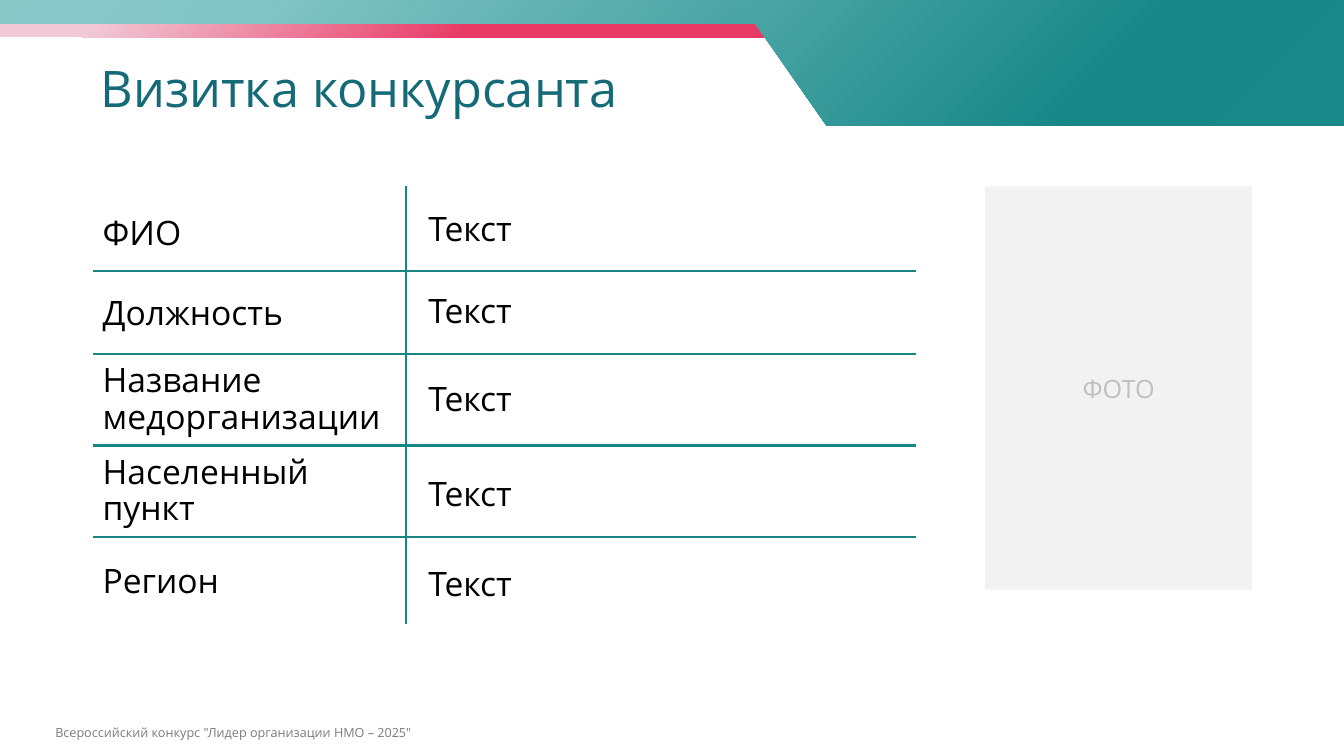
from pptx import Presentation
from pptx.dml.color import RGBColor
from pptx.enum.shapes import MSO_CONNECTOR, MSO_SHAPE
from pptx.enum.text import MSO_ANCHOR, PP_ALIGN
from pptx.oxml import parse_xml
from pptx.oxml.ns import nsdecls, qn
from pptx.util import Inches, Pt
from lxml.etree import SubElement

TEAL = RGBColor(0x16, 0x86, 0x86)
LIGHT_TEAL = RGBColor(0x83, 0xC5, 0xC5)
MIDDLE_TEAL = RGBColor(0x4D, 0xA6, 0xA6)
BRIGHT_TEAL = RGBColor(0x19, 0x88, 0x88)
TITLE_TEAL = RGBColor(0x14, 0x6A, 0x76)
CRIMSON = RGBColor(0xE8, 0x3A, 0x66)
PALE_PINK = RGBColor(0xF1, 0xC8, 0xD6)
BLACK = RGBColor(0x00, 0x00, 0x00)
FOOTER_GRAY = RGBColor(0x7C, 0x7C, 0x7C)
PHOTO_FILL = RGBColor(0xF2, 0xF2, 0xF2)
PHOTO_TEXT = RGBColor(0xBF, 0xBF, 0xBF)

SLIDE_WIDTH, SLIDE_HEIGHT = 13.33, 7.5
BAND_TOP = -0.02
TABLE_LEFT, TABLE_RIGHT = 0.92, 9.09
TABLE_TOP, TABLE_BOTTOM = 1.85, 6.19
DIVIDER_X = 4.03
VALUE_LEFT, VALUE_WIDTH = 4.15, 4.36
ROW_LINES = (2.69, 3.51, 4.42, 5.33)
ROWS = (
    ("ФИО", 2.05, 0.99, 2.01),
    ("Должность", 2.85, 2.01, 2.83),
    ("Название\nмедорганизации", 3.56, 2.99, 3.7),
    ("Населенный\nпункт", 4.47, 2.36, 4.64),
    ("Регион", 5.51, 1.37, 5.54),
)


class SlideBuilder:
    font_name = "Open Sans"
    line_width = Pt(1.5)

    def __init__(self, slide):
        self.slide = slide

    def set_text(self, frame, text, size, color, spacing=None, align=None):
        paragraph = frame.paragraphs[0]
        paragraph.text = text
        paragraph.alignment = align
        paragraph.line_spacing = spacing
        paragraph.font.name = self.font_name
        paragraph.font.size = Pt(size)
        paragraph.font.color.rgb = color

    def text(self, text, left, top, width, height, size=24, color=BLACK,
             wrap=True, spacing=None, anchor=MSO_ANCHOR.TOP):
        box = self.slide.shapes.add_textbox(
            Inches(left), Inches(top), Inches(width), Inches(height))
        frame = box.text_frame
        frame.word_wrap = wrap
        frame.vertical_anchor = anchor
        self.set_text(frame, text, size, color, spacing)

    def line(self, start_x, start_y, end_x, end_y):
        connector = self.slide.shapes.add_connector(
            MSO_CONNECTOR.STRAIGHT, Inches(start_x), Inches(start_y),
            Inches(end_x), Inches(end_y))
        connector.line.color.rgb = TEAL
        connector.line.width = self.line_width
        SubElement(connector.element.spPr, qn("a:effectLst"))

    def rectangle(self, left, top, width, height):
        shape = self.slide.shapes.add_shape(
            MSO_SHAPE.RECTANGLE, Inches(left), Inches(top), Inches(width), Inches(height))
        return self.plain(shape)

    def polygon(self, points):
        corners = [(Inches(x), Inches(y)) for x, y in points]
        builder = self.slide.shapes.build_freeform(*corners[0], scale=1.0)
        builder.add_line_segments(corners[1:], close=True)
        return self.plain(builder.convert_to_shape())

    def plain(self, shape):
        shape.shadow.inherit = False
        shape.line.fill.background()
        return shape

    def radial_fill(self, shape, stops):
        shape.fill.background()
        stop_xml = "".join(
            f'<a:gs pos="{position * 1000}"><a:srgbClr val="{color}">'
            f'<a:alpha val="{opacity * 1000}"/></a:srgbClr></a:gs>'
            for position, color, opacity in stops)
        gradient = parse_xml(
            f'<a:gradFill {nsdecls("a")} rotWithShape="1"><a:gsLst>{stop_xml}</a:gsLst>'
            '<a:path path="circle"><a:fillToRect l="100000" t="100000"/></a:path>'
            '</a:gradFill>')
        properties = shape.element.spPr
        properties.replace(properties.find(qn("a:noFill")), gradient)

    def photo_frame(self, text, left, top, width, height):
        shape = self.rectangle(left, top, width, height)
        shape.fill.solid()
        shape.fill.fore_color.rgb = PHOTO_FILL
        shape.text_frame.vertical_anchor = MSO_ANCHOR.MIDDLE
        self.set_text(shape.text_frame, text, 18, PHOTO_TEXT, align=PP_ALIGN.CENTER)


def main():
    presentation = Presentation()
    presentation.slide_width = Inches(SLIDE_WIDTH)
    presentation.slide_height = Inches(SLIDE_HEIGHT)
    builder = SlideBuilder(presentation.slides.add_slide(presentation.slide_layouts[6]))

    builder.text('Всероссийский конкурс "Лидер организации НМО – 2025"',
                 0.45, 7.14, 12.83, 0.25, size=9, color=FOOTER_GRAY)
    builder.text("Визитка конкурсанта", 0.9, 0.18, 11.5, 1.45, size=36,
                 color=TITLE_TEAL, spacing=0.9, anchor=MSO_ANCHOR.MIDDLE)

    for y in ROW_LINES:
        builder.line(TABLE_LEFT, y, TABLE_RIGHT, y)
    builder.line(DIVIDER_X, TABLE_TOP, DIVIDER_X, TABLE_BOTTOM)

    for label, label_top, label_width, value_top in ROWS:
        two_lines = "\n" in label
        builder.text(label, TABLE_LEFT, label_top, label_width,
                     0.83 if two_lines else 0.5, wrap=False,
                     spacing=0.9 if two_lines else None)
        builder.text("Текст", VALUE_LEFT, value_top, VALUE_WIDTH, 0.5)

    builder.photo_frame("ФОТО", 9.77, TABLE_TOP, 2.65, 4)

    teal_band = builder.rectangle(0, BAND_TOP, SLIDE_WIDTH, 0.26)
    builder.radial_fill(teal_band, [(0, BRIGHT_TEAL, 100), (11, TEAL, 100),
                                    (80, LIGHT_TEAL, 100), (100, LIGHT_TEAL, 93)])
    pink_band = builder.rectangle(0, 0.24, SLIDE_WIDTH, 0.13)
    builder.radial_fill(pink_band, [(65, CRIMSON, 100), (93, PALE_PINK, 100),
                                    (100, PALE_PINK, 100)])
    corner = builder.polygon([(7.31, BAND_TOP), (SLIDE_WIDTH, BAND_TOP),
                              (SLIDE_WIDTH, 1.25), (8.2, 1.25)])
    builder.radial_fill(corner, [(0, BRIGHT_TEAL, 100), (36, TEAL, 100),
                                 (100, MIDDLE_TEAL, 100)])

    presentation.save("out.pptx")


if __name__ == "__main__":
    main()
